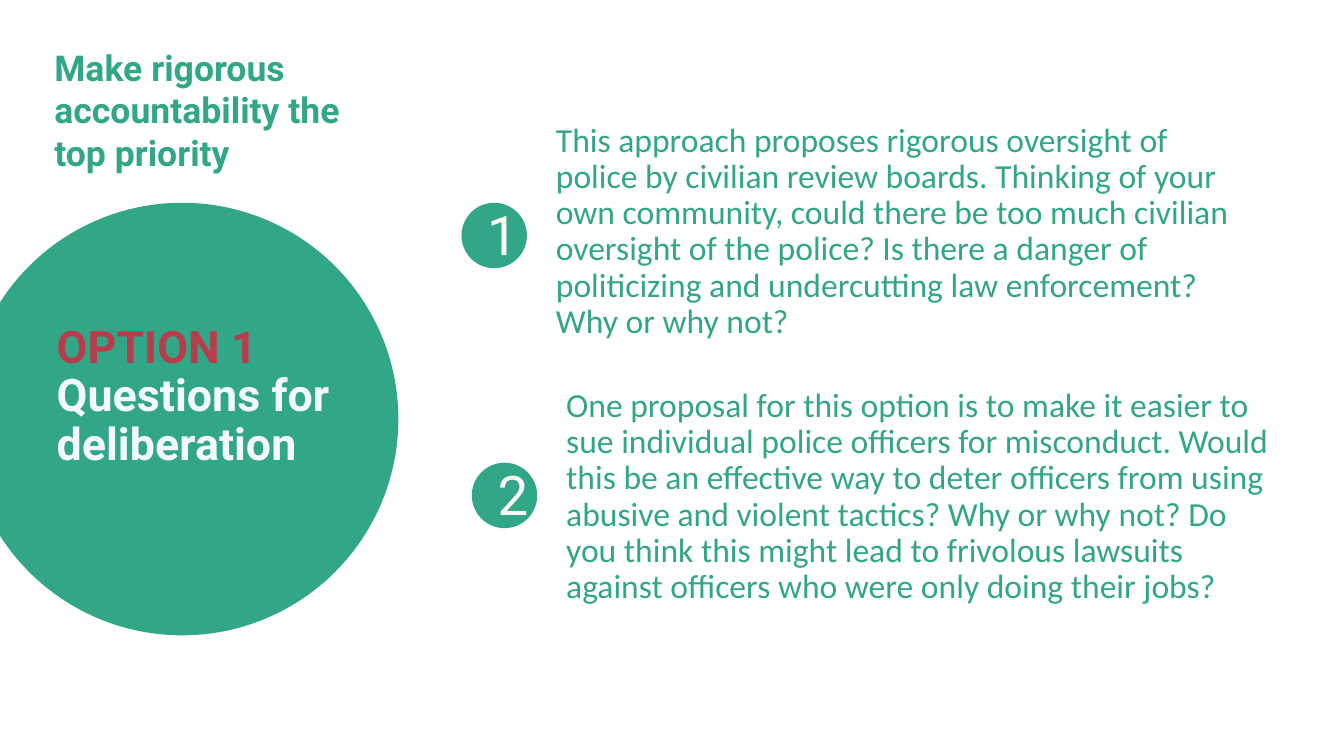
"""Build the Option 1 slide with its two numbered questions for deliberation."""
from pptx import Presentation
from pptx import util as u
from pptx.dml.color import RGBColor
from pptx.enum import shapes, text

COLORS = {"green": "31A787", "red": "B93C4C", "ice": "F4F9FE", "cream": "FDFAF5"}


def add_circle(parent, left, top, size):
    sp = parent.add_shape(shapes.MSO_SHAPE.OVAL, u.Cm(left), u.Cm(top), u.Cm(size), u.Cm(size))
    sp.shadow.inherit = False
    sp.fill.solid()
    sp.fill.fore_color.rgb = RGBColor.from_string(COLORS["green"])
    sp.line.fill.background()


def add_text(parent, box, lines, font, size, colors, bold=False, spacing=1.0,
             anchor=text.MSO_ANCHOR.MIDDLE):
    tf = parent.add_textbox(*map(u.Cm, box)).text_frame
    tf.word_wrap = True
    tf.vertical_anchor = anchor
    tf.text = lines
    for p, color in zip(tf.paragraphs, colors):
        p.line_spacing = spacing
        for r in p.runs:
            r.font.name = font
            r.font.size = u.Pt(size)
            r.font.bold = bold
            r.font.color.rgb = RGBColor.from_string(COLORS[color])
    return tf


prs = Presentation()
prs.slide_width, prs.slide_height = u.Cm(33.87), u.Cm(19.05)
s = prs.slides.add_slide(prs.slide_layouts[6])

add_circle(s.shapes, -0.86, 5.11, 10.9)
tf = add_text(s.shapes, (1.35, 8.1, 9.35, 3.84), "OPTION 1\nQuestions for deliberation",
              "Roboto", 32, ("red", "ice"), True, 0.9, text.MSO_ANCHOR.TOP)
tf.margin_left = tf.margin_right = tf.margin_top = tf.margin_bottom = u.Cm(0.08)

questions = [
    (11.63, 5.11, 4.78, 18.08,
     "This approach proposes rigorous oversight of police by civilian review boards. "
     "Thinking of your own community, could there be too much civilian oversight of the "
     "police? Is there a danger of politicizing and undercutting law enforcement? "
     "Why or why not?"),
    (11.89, 11.66, 11.46, 18.47,
     "One proposal for this option is to make it easier to sue individual police officers "
     "for misconduct. Would this be an effective way to deter officers from using abusive "
     "and violent tactics? Why or why not? Do you think this might lead to frivolous "
     "lawsuits against officers who were only doing their jobs?"),
]
for number, (left, top, text_top, width, question) in enumerate(questions, 1):
    group = s.shapes.add_group_shape().shapes
    add_circle(group, left, top, 1.65)
    add_text(group, (left + 0.4, top - 0.5, 1.65, 2.54), str(number), "Roboto", 39, ["cream"])
    add_text(group, (left + 2.13, text_top, width, 2.13), question, "Calibri", 24, ["green"],
             spacing=0.9)

add_text(s.shapes, (1.12, 0.66, 10.19, 3.84), "Make rigorous accountability the \vtop priority",
         "Roboto", 25.4, ["green"], True, anchor=text.MSO_ANCHOR.BOTTOM)

prs.save("out.pptx")
